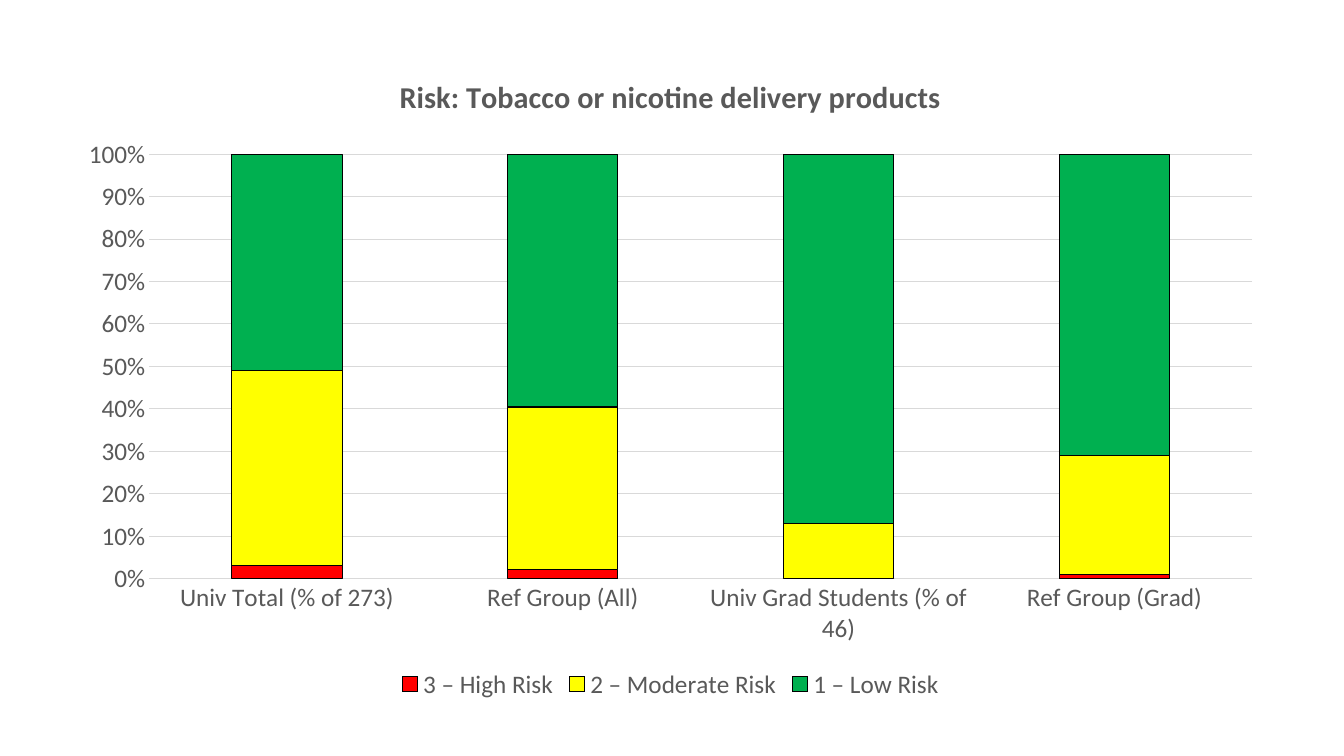
from pptx import Presentation
from pptx.chart.data import CategoryChartData
from pptx.dml.color import RGBColor
from pptx.enum.chart import XL_CHART_TYPE as ChartType
from pptx.enum.chart import XL_LEGEND_POSITION as LegendPos
from pptx.enum.chart import XL_TICK_MARK as Tick
from pptx.util import Inches, Pt

FONT, GREY, RULE = "Calibri", "595959", "D9D9D9"
GROUPS = ["Univ Total (% of 273)", "Ref Group (All)",
          "Univ Grad Students (% of 46)", "Ref Group (Grad)"]
RISKS = [("3 – High Risk", "FF0000", (3, 2, 0, 1)),
         ("2 – Moderate Risk", "FFFF00", (46, 38, 13, 28)),
         ("1 – Low Risk", "00B050", (51, 59, 87, 71))]


def rgb(code):
    return RGBColor.from_string(code)


def style_font(font, size=18, bold=False):
    font.name, font.size, font.bold = FONT, Pt(size), bold
    font.color.rgb = rgb(GREY)


def style_line(line, color):
    line.color.rgb = rgb(color)
    line.width = Pt(0.75)


def style_axes(chart):
    cat, val = chart.category_axis, chart.value_axis
    for axis in (cat, val):
        axis.major_tick_mark = axis.minor_tick_mark = Tick.NONE
        style_font(axis.tick_labels.font)
    style_line(cat.format.line, RULE)
    val.format.line.fill.background()
    val.has_major_gridlines = True
    style_line(val.major_gridlines.format.line, RULE)
    val.minimum_scale, val.maximum_scale, val.major_unit = 0, 1, 0.1
    val.tick_labels.number_format = "0%"
    val.tick_labels.number_format_is_linked = False


def add_risk_chart(slide, title, left, top, width, height):
    data = CategoryChartData()
    data.categories = GROUPS
    for name, _, values in RISKS:
        data.add_series(name, values)
    chart = slide.shapes.add_chart(ChartType.COLUMN_STACKED_100, left, top,
                                   width, height, data).chart
    style_font(chart.font)

    # Title
    chart.has_title = True
    tf = chart.chart_title.text_frame
    tf.text = title
    style_font(tf.paragraphs[0].runs[0].font, 21.6, True)
    chart.chart_title.include_in_layout = False

    # Columns
    plot = chart.plots[0]
    plot.gap_width, plot.overlap, plot.vary_by_categories = 150, 100, False
    for series, (_, color, _) in zip(plot.series, RISKS):
        series.format.fill.solid()
        series.format.fill.fore_color.rgb = rgb(color)
        style_line(series.format.line, "000000")
        series.invert_if_negative = False

    style_axes(chart)

    # Legend
    chart.has_legend = True
    chart.legend.position = LegendPos.BOTTOM
    chart.legend.include_in_layout = False
    style_font(chart.legend.font)


def main():
    prs = Presentation()
    prs.slide_width, prs.slide_height = Inches(13.33), Inches(7.5)
    slide = prs.slides.add_slide(prs.slide_layouts[6])
    add_risk_chart(slide, "Risk: Tobacco or nicotine delivery products",
                   Inches(0.64), Inches(0.51), Inches(12.02), Inches(6.48))
    prs.save("out.pptx")


if __name__ == "__main__":
    main()
